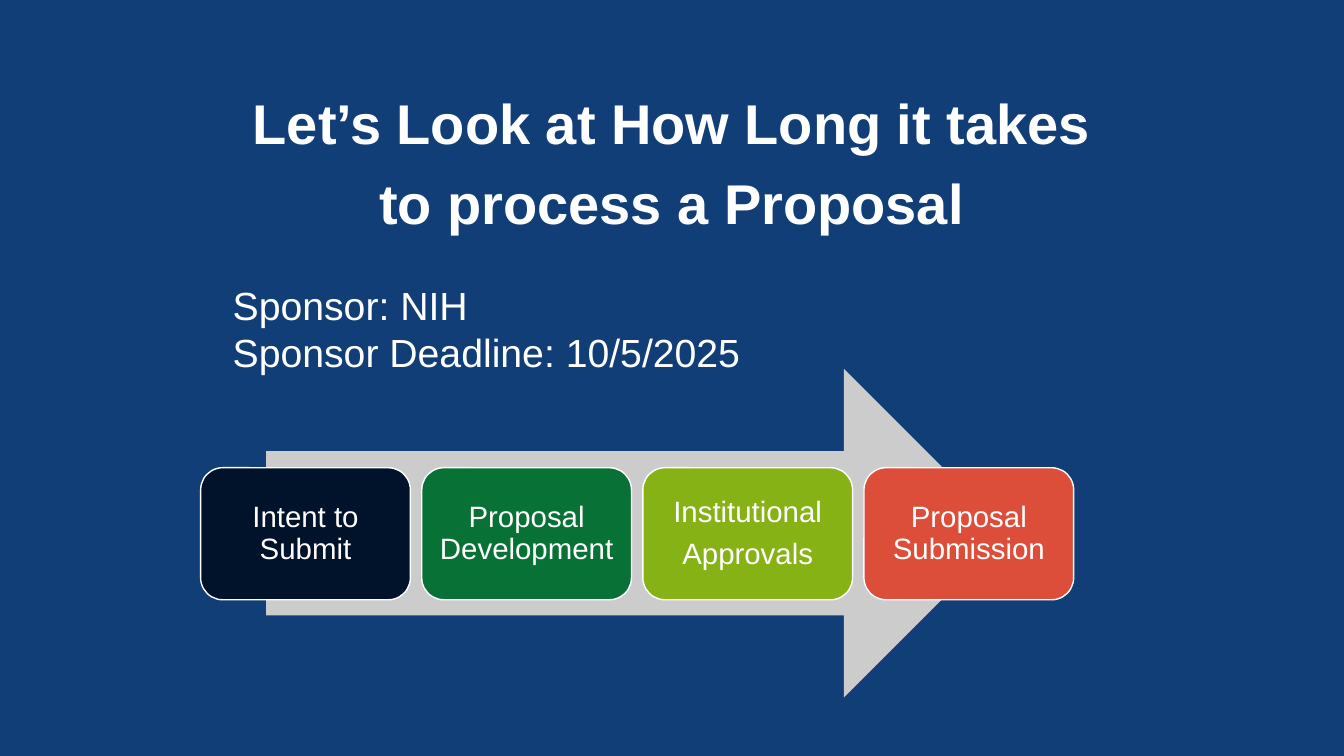
from dataclasses import dataclass

from pptx import Presentation
from pptx.dml.color import RGBColor
from pptx.enum.shapes import MSO_SHAPE
from pptx.enum.text import MSO_ANCHOR, MSO_AUTO_SIZE, PP_ALIGN
from pptx.util import Inches, Pt


@dataclass(frozen=True)
class Theme:
    font: str = "Arial"
    background: RGBColor = RGBColor(0x11, 0x3E, 0x76)
    white: RGBColor = RGBColor(0xFF, 0xFF, 0xFF)
    arrow: RGBColor = RGBColor(0xCC, 0xCC, 0xCD)
    navy: RGBColor = RGBColor(0x01, 0x12, 0x2B)
    green: RGBColor = RGBColor(0x08, 0x72, 0x36)
    lime: RGBColor = RGBColor(0x87, 0xB2, 0x16)
    red: RGBColor = RGBColor(0xDC, 0x4D, 0x3A)
    title_size: Pt = Pt(40)
    sponsor_size: Pt = Pt(28)
    step_size: Pt = Pt(21)


theme = Theme()


def write_lines(frame, lines, size, align, bold=False):
    """Fill a text frame with one paragraph per line."""
    frame.word_wrap = True
    for index, line in enumerate(lines):
        para = frame.paragraphs[0] if index == 0 else frame.add_paragraph()
        para.alignment = align
        span = para.add_run()
        span.text = line
        span.font.name = theme.font
        span.font.size = size
        span.font.bold = bold
        span.font.color.rgb = theme.white


def set_margins(frame, margin):
    frame.margin_left = frame.margin_right = margin
    frame.margin_top = frame.margin_bottom = margin
    frame.vertical_anchor = MSO_ANCHOR.MIDDLE


# Page
deck = Presentation()
deck.slide_width, deck.slide_height = Inches(13.33), Inches(7.5)
page = deck.slides.add_slide(deck.slide_layouts[5])
page.background.fill.solid()
page.background.fill.fore_color.rgb = theme.background

# Title
title = page.shapes.title
title.left, title.top = Inches(2.45), Inches(0.58)
title.width, title.height = Inches(8.42), Inches(1.92)
frame = title.text_frame
set_margins(frame, 0)
frame.auto_size = MSO_AUTO_SIZE.NONE
write_lines(frame, ["Let’s Look at How Long it takes to process a Proposal"],
            theme.title_size, PP_ALIGN.CENTER, bold=True)
frame.paragraphs[0].line_spacing = 1.2
frame.paragraphs[0].space_before = Pt(10)

# Sponsor details
sponsor = page.shapes.add_textbox(Inches(2.21), Inches(2.74), Inches(5.66), Inches(1.65))
write_lines(sponsor.text_frame, ["Sponsor: NIH", "Sponsor Deadline: 10/5/2025"],
            theme.sponsor_size, PP_ALIGN.LEFT)

# Arrow behind the steps
arrow = page.shapes.add_shape(MSO_SHAPE.RIGHT_ARROW, Inches(2.64), Inches(3.66),
                              Inches(7.36), Inches(3.26))
arrow.shadow.inherit = False
arrow.fill.solid()
arrow.fill.fore_color.rgb = theme.arrow
arrow.line.fill.background()

# Process steps
steps = [
    (["Intent to Submit"], theme.navy),
    (["Proposal Development"], theme.green),
    (["Institutional", "Approvals"], theme.lime),
    (["Proposal Submission"], theme.red),
]
first_left, pitch = 1.99, 2.193
for index, (lines, color) in enumerate(steps):
    box = page.shapes.add_shape(MSO_SHAPE.ROUNDED_RECTANGLE,
                                Inches(first_left + index * pitch), Inches(4.64),
                                Inches(2.08), Inches(1.31))
    box.shadow.inherit = False
    box.fill.solid()
    box.fill.fore_color.rgb = color
    box.line.color.rgb = theme.white
    box.line.width = Pt(1)
    set_margins(box.text_frame, Inches(0.09))
    write_lines(box.text_frame, lines, theme.step_size, PP_ALIGN.CENTER)
    for para in box.text_frame.paragraphs:
        para.line_spacing = 0.9
        para.space_after = Pt(7.35)

deck.save("out.pptx")
